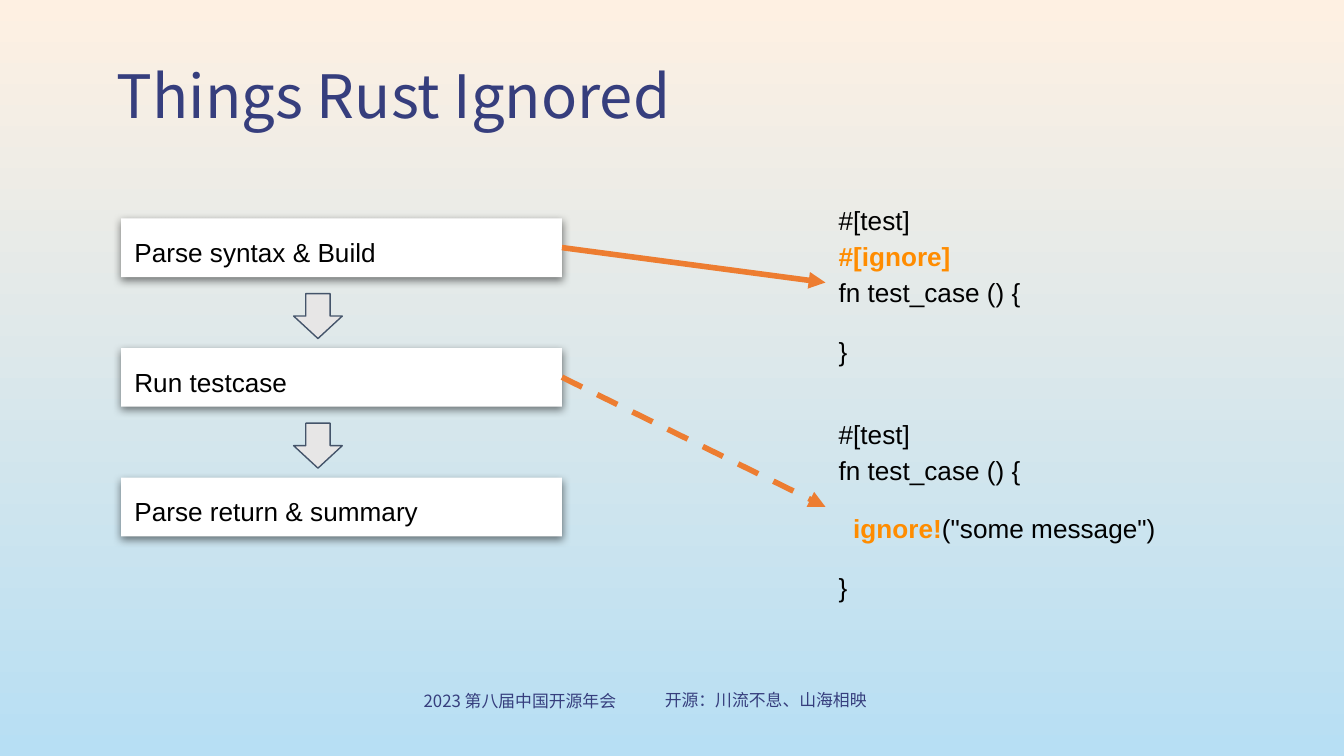
"""Build a slide on how ignored tests fit into a test run."""
from dataclasses import dataclass
from typing import Any, Optional

from lxml import etree
from pptx import Presentation
from pptx.dml.color import RGBColor
from pptx.enum.dml import MSO_LINE
from pptx.enum.shapes import MSO_CONNECTOR, MSO_SHAPE
from pptx.enum.text import MSO_ANCHOR, PP_ALIGN
from pptx.oxml.ns import qn
from pptx.util import Cm, Pt

RECTANGLE, DOWN_ARROW = MSO_SHAPE.RECTANGLE, MSO_SHAPE.DOWN_ARROW
STRAIGHT = MSO_CONNECTOR.STRAIGHT
DASH = MSO_LINE.DASH
LEFT, CENTER = PP_ALIGN.LEFT, PP_ALIGN.CENTER
TOP, MIDDLE = MSO_ANCHOR.TOP, MSO_ANCHOR.MIDDLE


@dataclass(frozen=True)
class Theme:
    sky_top: str = "FEF0E2"
    sky_bottom: str = "B7DFF4"
    heading: str = "363E7D"
    body: str = "000000"
    keyword: str = "FF8C00"
    card: str = "FFFFFF"
    step_fill: str = "E7E6E6"
    step_line: str = "44546A"
    pointer: str = "ED7D31"
    heading_font: str = "Noto Sans CJK SC"
    body_font: str = "Arial"
    title_size: int = 32
    body_size: int = 14
    footer_size: int = 9


THEME = Theme()


@dataclass(frozen=True)
class Area:
    left: float
    top: float
    width: float
    height: float

    def lengths(self) -> tuple:
        return tuple(Cm(value) for value in (self.left, self.top, self.width, self.height))


@dataclass(frozen=True)
class TextStyle:
    font: str
    size: int
    color: str
    spacing: float = 1.0
    before: int = 0
    inset_x: float = 0.25
    inset_y: float = 0.25
    align: Any = LEFT
    anchor: Any = TOP


@dataclass(frozen=True)
class Span:
    text: str
    keyword: bool = False


@dataclass(frozen=True)
class Label:
    area: Area
    paras: list
    style: TextStyle


@dataclass(frozen=True)
class Pointer:
    start: tuple
    end: tuple
    dash: Optional[Any] = None


TITLE = TextStyle(THEME.heading_font, THEME.title_size, THEME.heading, 0.9,
                  inset_x=0.18, inset_y=0.1, anchor=MIDDLE)
FOOTER = TextStyle(THEME.heading_font, THEME.footer_size, THEME.heading,
                   inset_x=0.18, inset_y=0.1, align=CENTER)
BODY = TextStyle(THEME.body_font, THEME.body_size, THEME.body, 1.15, before=12)

STAGES = ("Parse syntax & Build", "Run testcase", "Parse return & summary")
STAGE = Area(2.29, 4.13, 8.33, 1.11)
STEP = Area(5.55, 5.55, 0.92, 0.85)
PITCH = 2.45
CODE_LEFT = 15.6

LABELS = (
    Label(Area(7.21, 12.95, 5.23, 0.58), [[Span("2023 第八届中国开源年会")]], FOOTER),
    Label(Area(12.17, 12.93, 4.6, 0.58), [[Span("开源：川流不息、山海相映")]], FOOTER),
    Label(Area(2.03, 0.86, 16.92, 2.03), [[Span("Things Rust Ignored")]], TITLE),
    Label(Area(CODE_LEFT, 3.53, 7.04, 3.61),
          [[Span("#[test]\n"), Span("#[ignore]\n", True), Span("fn test_case () {")],
           [Span("}")]], BODY),
    Label(Area(CODE_LEFT, 7.57, 8, 4.04),
          [[Span("#[test]\nfn test_case () {")],
           [Span("  "), Span("ignore!", True), Span('("some message")')],
           [Span("}")]], BODY),
)

STAGE_RIGHT = STAGE.left + STAGE.width
POINTERS = (
    Pointer((STAGE_RIGHT, 4.68), (CODE_LEFT, 5.34)),
    Pointer((STAGE_RIGHT, 4.68 + PITCH), (CODE_LEFT, 9.58), DASH),
)


def rgb(color: str) -> RGBColor:
    return RGBColor.from_string(color)


def apply(target: Any, values: dict) -> None:
    for name, value in values.items():
        setattr(target, name, value)


def add_span(para: Any, span: Span, style: TextStyle) -> None:
    for index, line in enumerate(span.text.split("\n")):
        if index:
            para.add_line_break()
        if line:
            run = para.add_run()
            run.text = line
            apply(run.font, {"name": style.font, "size": Pt(style.size), "bold": span.keyword})
            run.font.color.rgb = rgb(THEME.keyword if span.keyword else style.color)
            etree.SubElement(run.font._element, qn("a:ea"), typeface=style.font)


def write_text(box: Any, paras: list, style: TextStyle) -> None:
    frame = box.text_frame
    apply(frame, {
        "word_wrap": True, "vertical_anchor": style.anchor,
        "margin_left": Cm(style.inset_x), "margin_right": Cm(style.inset_x),
        "margin_top": Cm(style.inset_y), "margin_bottom": Cm(style.inset_y),
    })
    for index, spans in enumerate(paras):
        para = frame.add_paragraph() if index else frame.paragraphs[0]
        apply(para, {"alignment": style.align, "line_spacing": style.spacing,
                     "space_before": Pt(style.before if index else 0)})
        for span in spans:
            add_span(para, span, style)


def add_card_shadow(box: Any) -> None:
    effects = box._element.spPr.find(qn("a:effectLst"))
    shadow = etree.SubElement(effects, qn("a:outerShdw"), blurRad=str(Pt(4.5)),
                              dist=str(Pt(1.5)), dir="5400000", algn="bl", rotWithShape="0")
    color = etree.SubElement(shadow, qn("a:srgbClr"), val=THEME.body)
    etree.SubElement(color, qn("a:alpha"), val="50000")


def add_shape(page: Any, kind: Any, area: Area, fill: str, line: Optional[str] = None) -> Any:
    shape = page.shapes.add_shape(kind, *area.lengths())
    shape.fill.solid()
    shape.fill.fore_color.rgb = rgb(fill)
    if line:
        shape.line.color.rgb = rgb(line)
        shape.line.width = Pt(0.75)
    else:
        shape.line.fill.background()
    shape.shadow.inherit = False
    return shape


def shifted(area: Area, row: int) -> Area:
    return Area(area.left, area.top + row * PITCH, area.width, area.height)


def add_pointer(page: Any, pointer: Pointer) -> None:
    ends = [Cm(value) for value in pointer.start + pointer.end]
    connector = page.shapes.add_connector(STRAIGHT, *ends)
    connector.line.color.rgb = rgb(THEME.pointer)
    apply(connector.line, {"width": Pt(3), "dash_style": pointer.dash})
    properties = connector._element.spPr
    etree.SubElement(properties.find(qn("a:ln")), qn("a:tailEnd"), type="triangle")
    etree.SubElement(properties, qn("a:effectLst"))


def paint_background(page: Any) -> None:
    fill = page.background.fill
    fill.gradient()
    fill.gradient_angle = 270
    for stop, color in zip(fill.gradient_stops, (THEME.sky_top, THEME.sky_bottom)):
        stop.color.rgb = rgb(color)


def main() -> None:
    deck = Presentation()
    apply(deck, {"slide_width": Cm(25.4), "slide_height": Cm(14.29)})
    page = deck.slides.add_slide(deck.slide_layouts[6])
    paint_background(page)
    for label in LABELS:
        write_text(page.shapes.add_textbox(*label.area.lengths()), label.paras, label.style)
    for row, stage in enumerate(STAGES):
        card = add_shape(page, RECTANGLE, shifted(STAGE, row), THEME.card)
        add_card_shadow(card)
        write_text(card, [[Span(stage)]], BODY)
    for row in range(len(STAGES) - 1):
        add_shape(page, DOWN_ARROW, shifted(STEP, row), THEME.step_fill, THEME.step_line)
    for pointer in POINTERS:
        add_pointer(page, pointer)
    deck.save("out.pptx")


if __name__ == "__main__":
    main()
